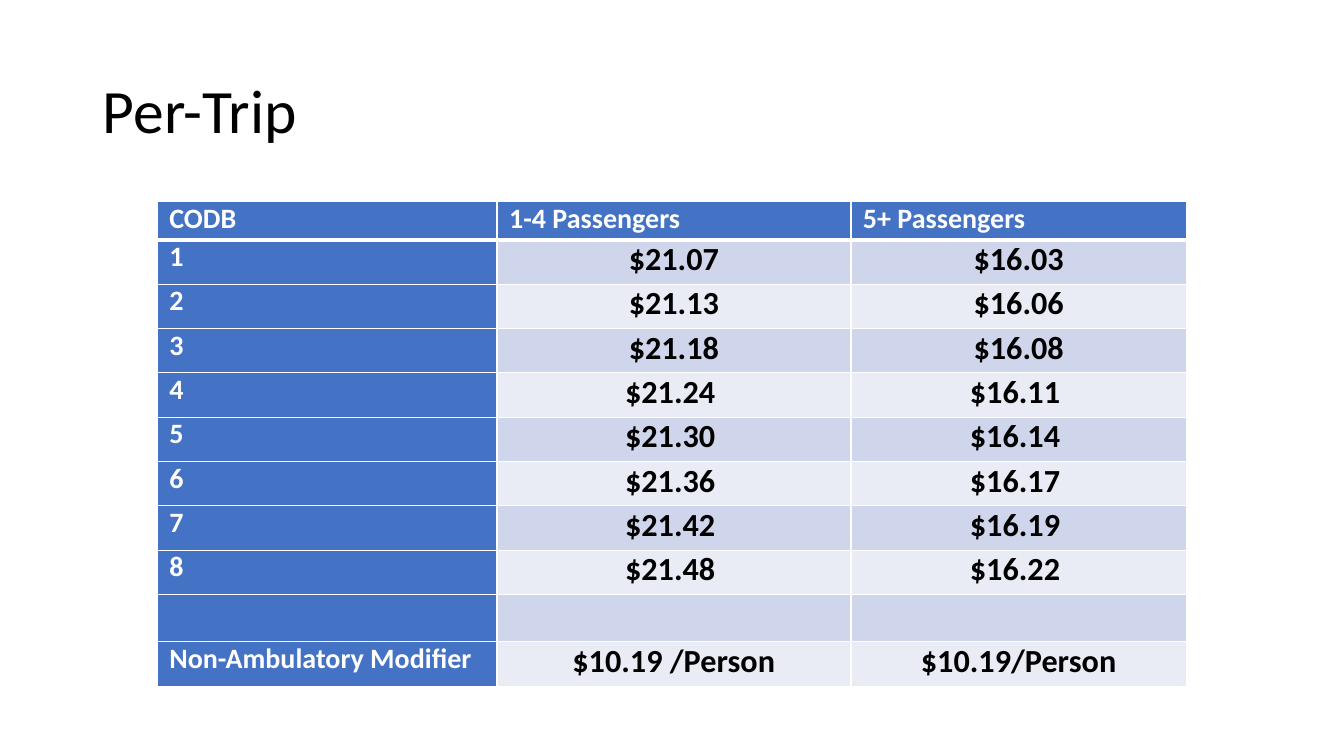
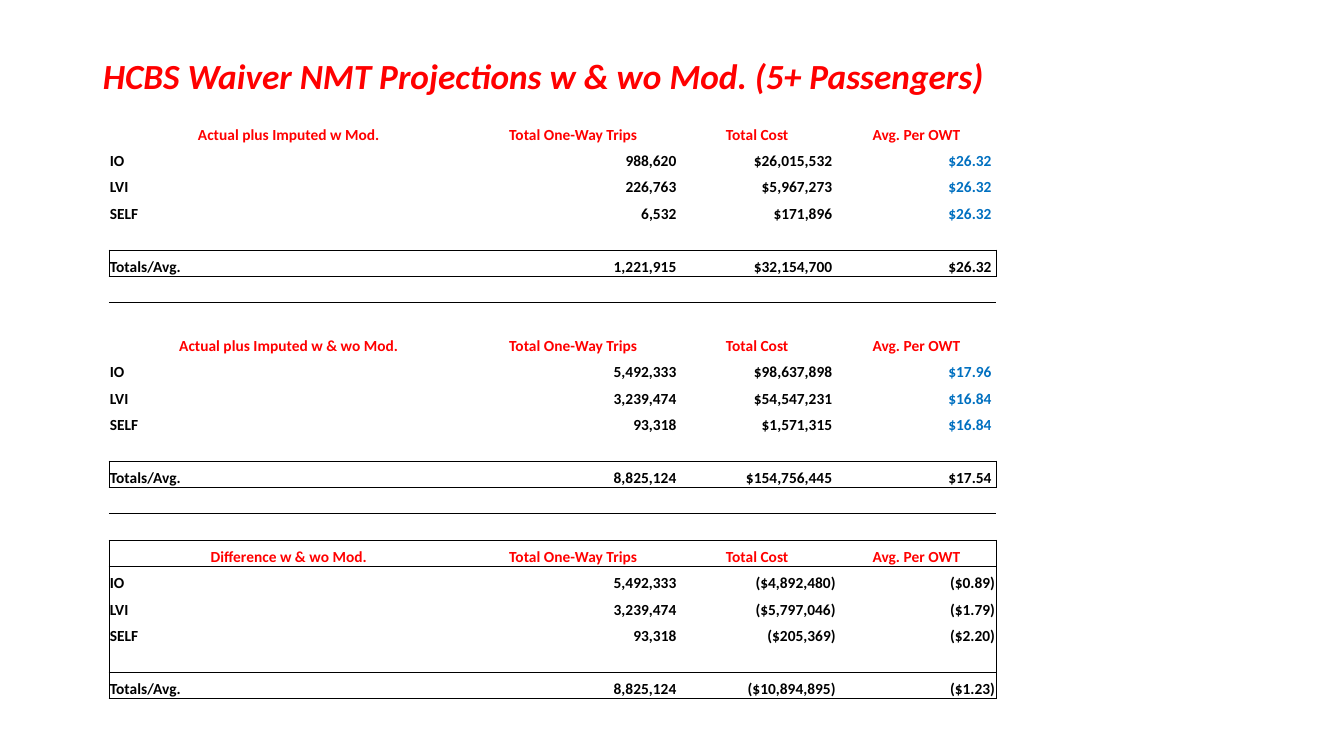
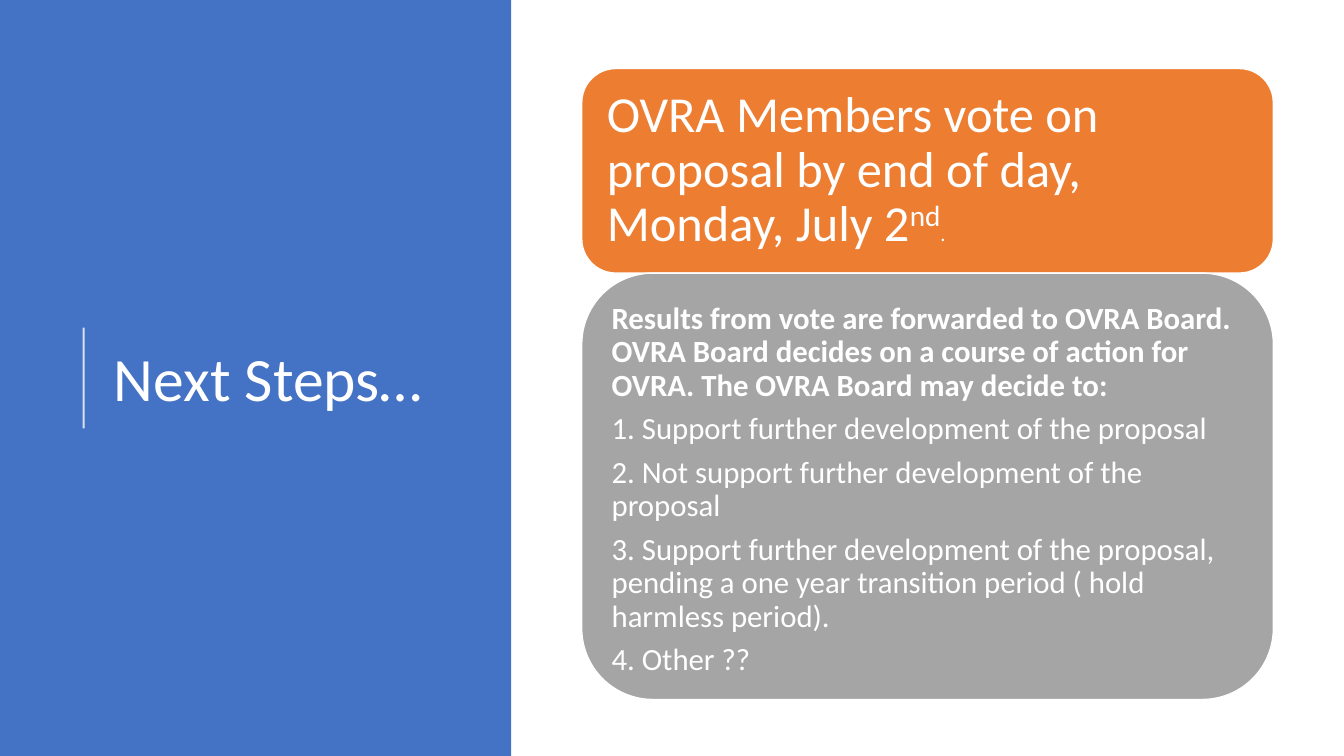
import collections
import dataclasses
import typing

import pptx
import pptx.dml.color
import pptx.enum.shapes
import pptx.enum.text
import pptx.oxml.ns
import pptx.presentation
import pptx.shapes.autoshape
import pptx.slide
import pptx.table
import pptx.text.text
import pptx.util
from lxml import etree

Inches = pptx.util.Inches
Pt = pptx.util.Pt
qn = pptx.oxml.ns.qn
ALIGN = pptx.enum.text.PP_ALIGN
ANCHOR = pptx.enum.text.MSO_ANCHOR
SHAPE = pptx.enum.shapes.MSO_SHAPE

FONT = "Calibri"
WHITE, BLACK = "FFFFFF", "000000"
BLUE, ORANGE, GRAY = "4472C4", "ED7D31", "A5A5A5"
RED, RATE_BLUE = "FF0000", "0070C0"
BANDS = ("CFD5EA", "E9EBF5")
PLAIN_TABLE_STYLE = "{2D5ABB26-0587-4C30-8999-92F81FD0307C}"
TITLE_ONLY = 5


class Box(typing.NamedTuple):
    left: float
    top: float
    width: float
    height: float

    def lengths(self) -> list[int]:
        return [Inches(value) for value in self]


@dataclasses.dataclass(frozen=True)
class TextStyle:
    size: float
    color: str
    bold: bool = False
    italic: bool = False
    align: ALIGN = ALIGN.LEFT


@dataclasses.dataclass(frozen=True)
class CellFrame:
    """Insets (left, top, right, bottom) and anchor shared by a table's cells."""
    insets: Box
    anchor: ANCHOR


@dataclasses.dataclass(frozen=True)
class Projection:
    heading: str
    rows: tuple[tuple[str, str, str, str], ...]
    totals: tuple[str, str, str, str]
    rate_color: str


RATES = (
    ("1", "$21.07", "$16.03"),
    ("2", "$21.13", "$16.06"),
    ("3", "$21.18", "$16.08"),
    ("4", "$21.24 ", "$16.11 "),
    ("5", "$21.30 ", "$16.14 "),
    ("6", "$21.36 ", "$16.17 "),
    ("7", "$21.42 ", "$16.19 "),
    ("8", "$21.48 ", "$16.22 "),
    ("", "", ""),
    ("Non-Ambulatory Modifier", "$10.19 /Person", "$10.19/Person"),
)
PROJECTIONS = (
    Projection(
        "Actual plus Imputed w Mod.",
        (("IO", "988,620", "$26,015,532 ", "$26.32 "),
         ("LVI", "226,763", "$5,967,273 ", "$26.32 "),
         ("SELF", "6,532", "$171,896 ", "$26.32 ")),
        ("Totals/Avg.", "1,221,915", "$32,154,700 ", "$26.32 "),
        RATE_BLUE),
    Projection(
        "Actual plus Imputed w & wo Mod.",
        (("IO", "5,492,333", "$98,637,898 ", "$17.96 "),
         ("LVI", "3,239,474", "$54,547,231 ", "$16.84 "),
         ("SELF", "93,318", "$1,571,315 ", "$16.84 ")),
        ("Totals/Avg.", "8,825,124", "$154,756,445 ", "$17.54 "),
        RATE_BLUE),
    Projection(
        "Difference w & wo Mod.",
        (("IO", "5,492,333", "($4,892,480)", "($0.89)"),
         ("LVI", "3,239,474", "($5,797,046)", "($1.79)"),
         ("SELF", "93,318", "($205,369)", "($2.20)")),
        ("Totals/Avg.", "8,825,124", "($10,894,895)", "($1.23)"),
        BLACK),
)
BOARD_DECISION = (
    "Results from vote are forwarded to OVRA Board. OVRA Board decides on a "
    "course of action for OVRA. The OVRA Board may decide to:",
    "1. Support further development of the proposal",
    "2. Not support further development of the proposal",
    "3. Support further development of the proposal, pending a one year "
    "transition period ( hold harmless period).",
    "4. Other ??",
)


def rgb(color: str) -> pptx.dml.color.RGBColor:
    return pptx.dml.color.RGBColor.from_string(color)


def style_paragraph(paragraph: pptx.text.text._Paragraph, style: TextStyle) -> None:
    paragraph.alignment = style.align
    font = paragraph.font
    font.name, font.size = FONT, Pt(style.size)
    font.bold, font.italic = style.bold, style.italic
    font.color.rgb = rgb(style.color)


def add_titled_slide(deck: pptx.presentation.Presentation, text: str, box: Box,
                     style: TextStyle) -> pptx.slide.Slide:
    slide = deck.slides.add_slide(deck.slide_layouts[TITLE_ONLY])
    title = slide.shapes.title
    title.left, title.top, title.width, title.height = box.lengths()
    frame = title.text_frame
    frame.text = text
    frame.word_wrap = True
    frame.auto_size = pptx.enum.text.MSO_AUTO_SIZE.NONE
    frame.vertical_anchor = ANCHOR.MIDDLE
    style_paragraph(frame.paragraphs[0], style)
    frame.paragraphs[0].line_spacing = 0.9
    return slide


def add_plain_table(slide: pptx.slide.Slide, box: Box, row_count: int,
                    column_widths: tuple[float, ...]) -> pptx.table.Table:
    """Add a table without grid lines or banding, with rows of equal height."""
    table = slide.shapes.add_table(row_count, len(column_widths), *box.lengths()).table
    table.horz_banding = False
    table._tbl.tblPr.find(qn("a:tableStyleId")).text = PLAIN_TABLE_STYLE
    for column, width in zip(table.columns, column_widths):
        column.width = Inches(width)
    return table


def fill_cell(cell: pptx.table._Cell, text: str, style: TextStyle, frame: CellFrame) -> None:
    (cell.margin_left, cell.margin_top,
     cell.margin_right, cell.margin_bottom) = frame.insets.lengths()
    cell.vertical_anchor = frame.anchor
    paragraph = cell.text_frame.paragraphs[0]
    if text:
        paragraph.text = text
    else:
        end = etree.SubElement(paragraph._p, qn("a:endParaRPr"))
        end.set("sz", str(round(style.size * 100)))
    style_paragraph(paragraph, style)


def set_borders(cell: pptx.table._Cell, color: str, widths: dict[str, float]) -> None:
    """Draw the sides in widths (L, R, T, B); call before filling the cell."""
    properties = cell._tc.get_or_add_tcPr()
    for side in "LRTB":
        if side in widths:
            line = etree.SubElement(properties, qn(f"a:ln{side}"), w=str(Pt(widths[side])))
            solid = etree.SubElement(line, qn("a:solidFill"))
            etree.SubElement(solid, qn("a:srgbClr"), val=color)


def add_block(slide: pptx.slide.Slide, kind: SHAPE, box: Box,
              color: str) -> pptx.shapes.autoshape.Shape:
    block = slide.shapes.add_shape(kind, *box.lengths())
    block.shadow.inherit = False
    block.fill.solid()
    block.fill.fore_color.rgb = rgb(color)
    block.line.fill.background()
    return block


def add_step(slide: pptx.slide.Slide, box: Box, color: str, inset: float,
             anchor: ANCHOR) -> pptx.text.text.TextFrame:
    step = add_block(slide, SHAPE.ROUNDED_RECTANGLE, box, color)
    step.line.color.rgb = rgb(WHITE)
    step.line.width = Pt(1)
    frame = step.text_frame
    frame.word_wrap = True
    frame.vertical_anchor = anchor
    frame.margin_left = frame.margin_right = Inches(inset)
    frame.margin_top = frame.margin_bottom = Inches(inset)
    return frame


def build_per_trip(deck: pptx.presentation.Presentation) -> None:
    slide = add_titled_slide(deck, "Per-Trip", Box(0.92, 0.4, 11.5, 1.45),
                             TextStyle(44, BLACK))
    rows = (("CODB", "1-4 Passengers", "5+ Passengers"),) + RATES
    table = add_plain_table(slide, Box(1.56, 2, 10.21, 4.84), len(rows), (3.37, 3.51, 3.33))
    table.rows[0].height = Inches(0.38)
    table.rows[9].height = Inches(0.47)
    label = TextStyle(20, WHITE, bold=True)
    rate = TextStyle(23, BLACK, bold=True, align=ALIGN.CENTER)
    frame = CellFrame(Box(0.12, 0, 0.12, 0), ANCHOR.TOP)
    for r, row in enumerate(rows):
        borders = {"L": 1, "R": 1, "T": 3 if r == 1 else 1, "B": 3 if r == 0 else 1}
        for c, text in enumerate(row):
            cell = table.cell(r, c)
            is_label = r == 0 or c == 0
            fill_cell(cell, text, label if is_label else rate, frame)
            set_borders(cell, WHITE, borders)
            cell.fill.solid()
            cell.fill.fore_color.rgb = rgb(BLUE if is_label else BANDS[(r - 1) % 2])


def build_projections(deck: pptx.presentation.Presentation) -> None:
    slide = add_titled_slide(
        deck, "HCBS Waiver NMT Projections w & wo Mod. (5+ Passengers)",
        Box(0.92, 0.46, 11.5, 0.63), TextStyle(25.2, RED, bold=True, italic=True))
    block_rows, total_offset = 8, 5
    row_count = block_rows * len(PROJECTIONS) - 2
    table = add_plain_table(slide, Box(1.08, 1.17, 8.8, 5.76), row_count,
                            (3.57, 2.07, 1.58, 1.58))
    heading = TextStyle(11, RED, bold=True, align=ALIGN.CENTER)
    label = TextStyle(11, BLACK, bold=True)
    amount = dataclasses.replace(label, align=ALIGN.RIGHT)
    frame = CellFrame(Box(0.01, 0.01, 0.01, 0), ANCHOR.BOTTOM)
    last_column = len(table.columns) - 1
    borders: dict[tuple[int, int], dict[str, float]] = collections.defaultdict(dict)

    def enclose(first: int, last: int) -> None:
        for c in range(last_column + 1):
            for r, side in ((first - 1, "B"), (first, "T"), (last, "B"), (last + 1, "T")):
                borders[r, c][side] = 0.5
        for r in range(first, last + 1):
            borders[r, 0]["L"] = borders[r, last_column]["R"] = 0.5

    blank = ("",) * (last_column + 1)
    for index, projection in enumerate(PROJECTIONS):
        start = index * block_rows
        headings = (projection.heading, "Total One-Way Trips", "Total Cost", "Avg. Per OWT")
        rows = (headings, *projection.rows, blank, projection.totals, blank, blank)
        rate = dataclasses.replace(amount, color=projection.rate_color)
        for offset, row in enumerate(rows[:row_count - start]):
            styles = (label, amount, amount, amount if offset == total_offset else rate)
            if offset == 0:
                styles = (heading,) * len(row)
            for c, (text, style) in enumerate(zip(row, styles)):
                fill_cell(table.cell(start + offset, c), text, style, frame)
        enclose(start + total_offset, start + total_offset)
    enclose(row_count - total_offset - 1, row_count - 1)
    for (r, c), widths in borders.items():
        if r < row_count:
            set_borders(table.cell(r, c), BLACK, widths)


def build_next_steps(deck: pptx.presentation.Presentation) -> None:
    slide = add_titled_slide(deck, "Next Steps…", Box(1.03, 0.78, 3.69, 6.02),
                             TextStyle(44, WHITE))
    add_block(slide, SHAPE.RECTANGLE, Box(0, 0, 5.07, 7.5), BLUE)
    rule = slide.shapes.add_connector(
        pptx.enum.shapes.MSO_CONNECTOR.STRAIGHT,
        Inches(0.83), Inches(4.25), Inches(0.83), Inches(3.25))
    rule.line.color.rgb = rgb(WHITE)
    rule.line.width = Pt(1.5)
    rule_properties = rule._element.spPr
    etree.SubElement(next(rule_properties.iter(qn("a:srgbClr"))), qn("a:alpha"), val="80000")
    etree.SubElement(rule_properties, qn("a:effectLst"))
    # The title has to lie in front of the blue panel.
    slide.shapes._spTree.append(slide.shapes.title._element)

    vote = add_step(slide, Box(5.77, 0.68, 6.86, 2.03), ORANGE, 0.15,
                    ANCHOR.MIDDLE).paragraphs[0]
    style_paragraph(vote, TextStyle(36, WHITE))
    vote.line_spacing = 0.9
    vote.add_run().text = "OVRA Members vote on proposal by end of day, Monday, July 2"
    ordinal = vote.add_run()
    ordinal.text = "nd"
    ordinal._r.get_or_add_rPr().set("baseline", "30000")
    period = vote.add_run()
    period.text = "."
    period.font.size = Pt(15)

    decision = add_step(slide, Box(5.77, 2.71, 6.86, 4.23), GRAY, 0.09, ANCHOR.TOP)
    decision.text = "\n".join(BOARD_DECISION)
    for index, paragraph in enumerate(decision.paragraphs):
        style_paragraph(paragraph, TextStyle(22, WHITE, bold=index == 0))
        paragraph.line_spacing = 0.9
        paragraph.space_after = Pt(7.5)


def main() -> None:
    deck = pptx.Presentation()
    deck.slide_width, deck.slide_height = Inches(13.33), Inches(7.5)
    build_per_trip(deck)
    build_projections(deck)
    build_next_steps(deck)
    deck.save("out.pptx")


if __name__ == "__main__":
    main()
